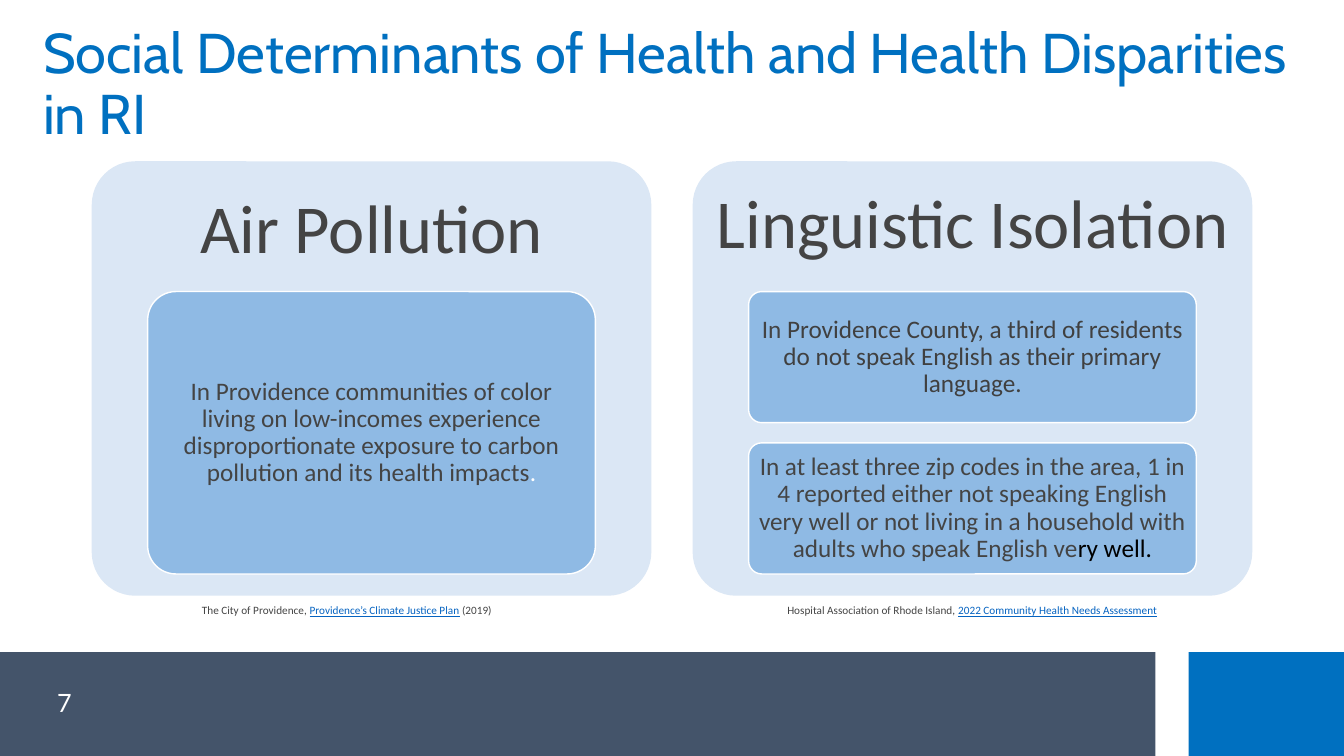
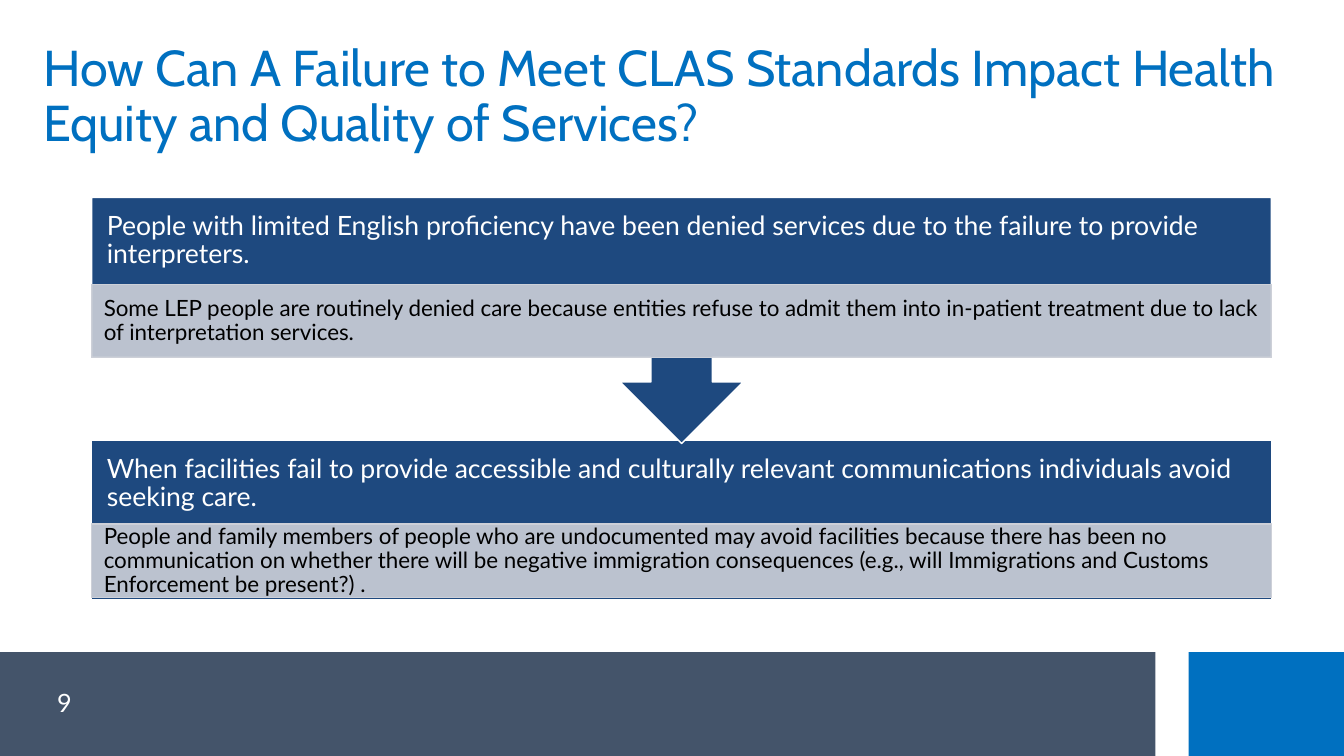
from lxml import etree
from pptx import Presentation
from pptx.dml.color import RGBColor
from pptx.enum.shapes import MSO_SHAPE
from pptx.enum.text import MSO_ANCHOR, PP_ALIGN
from pptx.oxml.ns import qn
from pptx.util import Inches, Pt

RECT = MSO_SHAPE.RECTANGLE
ROUND = MSO_SHAPE.ROUNDED_RECTANGLE
CALL = MSO_SHAPE.UP_ARROW_CALLOUT
LEFT, MID = PP_ALIGN.LEFT, PP_ALIGN.CENTER
TOP, CENTER = MSO_ANCHOR.TOP, MSO_ANCHOR.MIDDLE

WHITE, BLACK, BLUE, SLATE = "FFFFFF", "000000", "0070C0", "44546A"
GRAY, DARK, LINK = "444444", "404040", "0563C1"
PALE, SKY, NAVY, SILVER = "DBE7F5", "8FBAE4", "1E497F", "CDD0D8"
HEAD, BODY, SANS = "Cabin", "Calibri", "Lato"


def paint(target, color, alpha=None):
    target.solid()
    target.fore_color.rgb = RGBColor.from_string(color)
    if alpha:
        for node in target._xPr.iter(qn("a:srgbClr")):
            etree.SubElement(node, qn("a:alpha")).set("val", str(alpha * 1000))


def shape(slide, kind, box, fill, line=None, alpha=None):
    item = slide.shapes.add_shape(kind, *map(Inches, box))
    item.shadow.inherit = False
    paint(item.fill, fill, alpha)
    if line:
        item.line.width = Pt(1)
        paint(item.line.fill, line)
    else:
        item.line.fill.background()
    if kind == ROUND:
        item.adjustments[0] = 0.1
    return item


def write(item, runs, size=18, font=BODY, color=GRAY, align=LEFT,
          anchor=CENTER, space=0.9, pad=(0.1, 0.05)):
    frame = item.text_frame
    frame.word_wrap = True
    frame.vertical_anchor = anchor
    frame.margin_left = frame.margin_right = Inches(pad[0])
    frame.margin_top = frame.margin_bottom = Inches(pad[1])
    para = frame.paragraphs[0]
    para.alignment = align
    para.line_spacing = space
    for part in [runs] if isinstance(runs, str) else runs:
        words, tint = (part, color) if isinstance(part, str) else part
        run = para.add_run()
        run.text = words
        run.font.size = Pt(size)
        run.font.name = font
        run.font.color.rgb = RGBColor.from_string(tint)
        run.font.underline = tint == LINK


def text(slide, box, runs, **form):
    write(slide.shapes.add_textbox(*map(Inches, box)), runs, **form)


def base(deck, title, size, top, number):
    slide = deck.slides.add_slide(deck.slide_layouts[6])
    shape(slide, RECT, (0, 6.47, 11.46, 1.03), SLATE)
    shape(slide, RECT, (11.79, 6.47, 1.54, 1.03), BLUE)
    text(slide, (0.33, 6.77, 0.62, 0.37), number, font=SANS, color=WHITE,
         align=MID, anchor=TOP, space=1)
    text(slide, (0.33, top, 12.67, 0.72), title, size=size, font=HEAD,
         color=BLUE)
    return slide


def panel(slide, box, title, cards, space):
    left, top, width, height = box
    shape(slide, ROUND, box, PALE)
    text(slide, (left, top, width, height * 0.3), title, size=49, align=MID,
         space=space, pad=(0.2, 0.2))
    gap, area = 0.2, height * 0.65
    tall = (area - gap * (len(cards) - 1)) / len(cards)
    for i, runs in enumerate(cards):
        spot = (left + width * 0.1, top + height * 0.3 + i * (tall + gap),
                width * 0.8, tall)
        card = shape(slide, ROUND, spot, SKY, WHITE)
        write(card, runs, align=MID, pad=(0.05, 0.04))


def note(slide, box, runs, align):
    text(slide, box, runs, size=8, align=align, anchor=TOP, space=1.23)


def stage(slide, kind, box, title, detail):
    left, top, width, height = box
    block = shape(slide, kind, box, NAVY, WHITE)
    if kind == CALL:
        block.rotation = 180
    text(slide, (left, top, width, 0.86), title, size=19, font=SANS,
         color=WHITE, pad=(0.15, 0.15))
    drop = 0.86 if kind == CALL else 0.83
    band = shape(slide, RECT, (left, top + drop, width, 0.73), SILVER, SILVER,
                 alpha=90)
    write(band, detail, size=16, font=SANS, color=BLACK, pad=(0.12, 0.02))


def health(deck):
    slide = base(deck, "Social Determinants of Health and Health Disparities "
                 "in RI", 40, 0.49, "7")
    panel(slide, (0.91, 1.6, 5.55, 4.31), "Air Pollution", [
        ["In Providence communities of color living on low-incomes experience "
         "disproportionate exposure to carbon pollution and its health impacts",
         (".", WHITE)]], 1)
    panel(slide, (6.87, 1.6, 5.55, 4.31), "Linguistic Isolation", [
        ["In", (" Providence County, a third of residents do not speak "
                "English as their primary language.", DARK)],
        ["In at least three zip codes in the area, 1 in 4 reported either not "
         "speaking English very well or not living in a household with adults "
         "who speak English ve", ("ry well.", BLACK)]], 0.9)
    note(slide, (1.47, 5.91, 3.94, 0.25),
         ["The City of Providence, ",
          ("Providence’s Climate Justice Plan", LINK), " (2019)"], MID)
    note(slide, (7.71, 5.91, 4.01, 0.25),
         ["Hospital Association of Rhode Island, ",
          ("2022 Community Health Needs Assessment", LINK)], LEFT)


def impact(deck):
    slide = base(deck, "How Can A Failure to Meet CLAS Standards Impact Health "
                 "Equity and Quality of Services?", 36, 0.61, "9")
    stage(slide, RECT, (0.91, 4.37, 11.7, 1.58),
          "When facilities fail to provide accessible and culturally relevant "
          "communications individuals avoid seeking care.",
          "People and family members of people who are undocumented may avoid "
          "facilities because there has been no communication on whether there "
          "will be negative immigration consequences (e.g., will Immigrations "
          "and Customs Enforcement be present?) .")
    stage(slide, CALL, (0.91, 1.96, 11.7, 2.44),
          "People with limited English proficiency have been denied services "
          "due to the failure to provide interpreters.",
          "Some LEP people are routinely denied care because entities refuse to "
          "admit them into in-patient treatment due to lack of interpretation "
          "services.")


def main():
    deck = Presentation()
    deck.slide_width, deck.slide_height = Inches(13.33), Inches(7.5)
    health(deck)
    impact(deck)
    deck.save("out.pptx")


if __name__ == "__main__":
    main()
